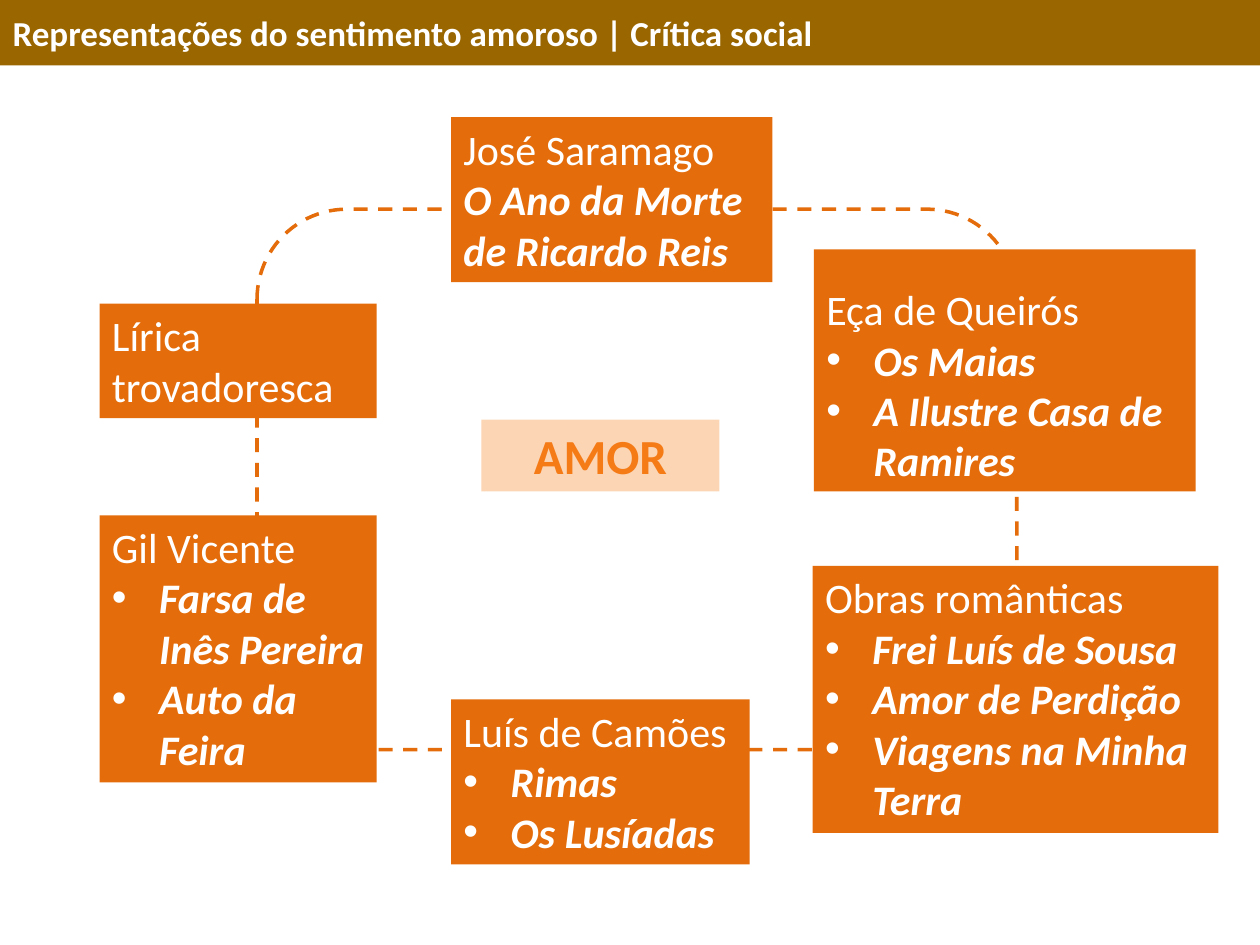
from lxml import etree
from pptx import Presentation, util as u
from pptx.dml.color import RGBColor
from pptx.enum import dml, shapes, text
from pptx.oxml.ns import qn

COLORS = {"band": "996600", "box": "E46C0A", "center": "FCD5B5",
          "accent": "F57B17", "white": "FFFFFF"}
COLUMNS, ROWS = 100, 75
ANCHOR = text.MSO_ANCHOR
ALIGN = text.PP_ALIGN


class SlideBuilder:
    """Holds the style and the current slide; places are (column, row, columns, rows)."""

    font = "Calibri"
    plain = {"size": u.Pt(24), "bold": False, "italic": False}
    work = {"size": u.Pt(24), "bold": True, "italic": True}
    indent = u.Inches(0.375)

    def __init__(self, presentation):
        self.cell_width = presentation.slide_width / COLUMNS
        self.cell_height = presentation.slide_height / ROWS
        # Layout 5 is title only
        self.slide = presentation.slides.add_slide(presentation.slide_layouts[5])

    def scale(self, place):
        left, top, width, height = place
        return [round(value) for value in (
            left * self.cell_width, top * self.cell_height,
            width * self.cell_width, height * self.cell_height)]

    def fill(self, shape, color):
        shape.fill.solid()
        shape.fill.fore_color.rgb = RGBColor.from_string(COLORS[color])

    def frame(self, shape, anchor):
        settings = {"word_wrap": True, "auto_size": text.MSO_AUTO_SIZE.NONE,
                    "vertical_anchor": anchor,
                    "margin_left": u.Inches(0.1), "margin_right": u.Inches(0.1),
                    "margin_top": u.Inches(0.05), "margin_bottom": u.Inches(0.05)}
        for name, value in settings.items():
            setattr(shape.text_frame, name, value)

    def add_words(self, paragraph, words, style, color="white", align=ALIGN.LEFT):
        paragraph.alignment = align
        run = paragraph.add_run()
        run.text = words
        for name, value in {"name": self.font, **style}.items():
            setattr(run.font, name, value)
        run.font.color.rgb = RGBColor.from_string(COLORS[color])

    def bullet(self, paragraph):
        properties = paragraph._p.get_or_add_pPr()
        properties.set("marL", str(self.indent))
        properties.set("indent", str(-self.indent))
        etree.SubElement(properties, qn("a:buFont"), typeface="Arial")
        etree.SubElement(properties, qn("a:buChar"), char="•")

    def title(self, place, words):
        title = self.slide.shapes.title
        title.left, title.top, title.width, title.height = self.scale(place)
        self.fill(title, "band")
        self.frame(title, ANCHOR.MIDDLE)
        self.add_words(title.text_frame.paragraphs[0], words,
                       {"size": u.Pt(20), "bold": True})

    def ring(self, place):
        ring = self.slide.shapes.add_shape(
            shapes.MSO_SHAPE.ROUNDED_RECTANGLE, *self.scale(place))
        ring.shadow.inherit = False
        ring.fill.background()
        ring.line.color.rgb = RGBColor.from_string(COLORS["box"])
        ring.line.width = u.Pt(2)
        ring.line.dash_style = dml.MSO_LINE.DASH

    def block(self, place, color, anchor=ANCHOR.TOP):
        block = self.slide.shapes.add_shape(
            shapes.MSO_SHAPE.RECTANGLE, *self.scale(place))
        block.shadow.inherit = False
        block.line.fill.background()
        self.fill(block, color)
        self.frame(block, anchor)
        return block.text_frame

    def label(self, place, words):
        frame = self.block(place, "center")
        self.add_words(frame.paragraphs[0], words, {"size": u.Pt(28), "bold": True},
                       "accent", ALIGN.CENTER)

    def author(self, place, name, works=(), bullets=True, anchor=ANCHOR.TOP):
        frame = self.block(place, "box", anchor)
        self.add_words(frame.paragraphs[0], name, self.plain)
        for work in works:
            paragraph = frame.add_paragraph()
            self.add_words(paragraph, work, self.work)
            if bullets:
                self.bullet(paragraph)


def main():
    presentation = Presentation()
    presentation.slide_width, presentation.slide_height = u.Inches(10), u.Inches(7.5)
    builder = SlideBuilder(presentation)

    # Heading and the dashed ring behind the boxes
    builder.title((0, 0, 100, 5.2),
                  "Representações do sentimento amoroso | Crítica social")
    builder.ring((20.4, 16.6, 60.3, 42.9))

    # Theme in the middle
    builder.label((38.2, 33.3, 18.9, 5.7), "AMOR")

    # Authors and works, clockwise from the top
    builder.author((35.8, 9.3, 25.5, 13.1), "José Saramago",
                   ["O Ano da Morte", "de Ricardo Reis"], bullets=False)
    builder.author((64.6, 19.8, 30.3, 19.2), "Eça de Queirós",
                   ["Os Maias", "A Ilustre Casa de Ramires"], anchor=ANCHOR.BOTTOM)
    builder.author((64.5, 44.9, 32.2, 21.2), "Obras românticas",
                   ["Frei Luís de Sousa", "Amor de Perdição", "Viagens na Minha Terra"])
    builder.author((35.8, 55.5, 23.7, 13.1), "Luís de Camões",
                   ["Rimas", "Os Lusíadas"])
    builder.author((7.9, 40.9, 22, 21.2), "Gil Vicente",
                   ["Farsa de Inês Pereira", "Auto da Feira"])
    builder.author((7.9, 24.1, 22, 9.1), "Lírica trovadoresca")

    presentation.save("out.pptx")


if __name__ == "__main__":
    main()
